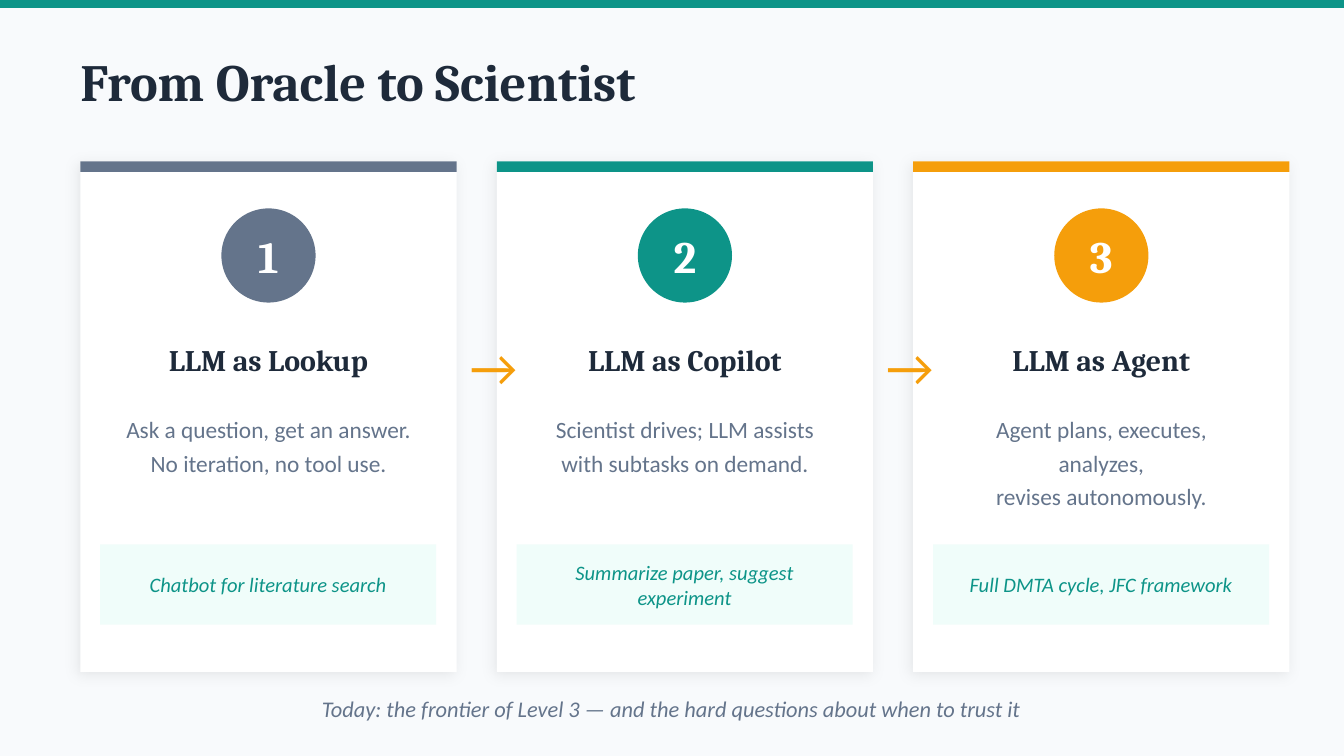
from lxml import etree
from pptx import Presentation
from pptx.dml.color import RGBColor
from pptx.enum import shapes, text
from pptx.oxml import ns
from pptx.util import Cm, Pt

INK, SLATE, TEAL, AMBER = "1E2A3A", "64748B", "0D9488", "F59E0B"
WHITE, MINT, PAPER = "FFFFFF", "F0FDFA", "F8FAFC"
RECTANGLE, OVAL = shapes.MSO_SHAPE.RECTANGLE, shapes.MSO_SHAPE.OVAL

presentation = Presentation()
presentation.slide_width, presentation.slide_height = Cm(25.4), Cm(14.29)
slide = presentation.slides.add_slide(presentation.slide_layouts[5])
slide.background.fill.solid()
slide.background.fill.fore_color.rgb = RGBColor.from_string(PAPER)


def add_block(left, top, width, height, fill=None, kind=RECTANGLE):
    """Add a borderless filled shape, or a text box when there is no fill."""
    box = [Cm(value) for value in (left, top, width, height)]
    if fill is None:
        return slide.shapes.add_textbox(*box)
    shape = slide.shapes.add_shape(kind, *box)
    shape.shadow.inherit = False
    shape.fill.solid()
    shape.fill.fore_color.rgb = RGBColor.from_string(fill)
    shape.line.fill.background()
    return shape


def write(shape, content, size, color, font="Calibri", bold=False, italic=False,
          align=text.PP_ALIGN.CENTER, anchor=text.MSO_ANCHOR.MIDDLE, spacing=None):
    frame = shape.text_frame
    frame.word_wrap = True
    frame.auto_size = text.MSO_AUTO_SIZE.NONE
    frame.vertical_anchor = anchor
    frame.text = content
    for paragraph in frame.paragraphs:
        paragraph.alignment = align
        paragraph.line_spacing = spacing
        paragraph.font.name = font
        paragraph.font.size = Pt(size)
        paragraph.font.bold = bold
        paragraph.font.italic = italic
        paragraph.font.color.rgb = RGBColor.from_string(color)


add_block(0, 0, 25.4, 0.15, TEAL)

title = slide.shapes.title
title.left, title.top, title.width, title.height = Cm(1.52), Cm(0.64), Cm(22.86), Cm(1.78)
frame = title.text_frame
frame.margin_left = frame.margin_right = frame.margin_top = frame.margin_bottom = 0
write(title, "From Oracle to Scientist", 28, INK, font="Cambria", bold=True,
      align=text.PP_ALIGN.LEFT)

levels = [
    (SLATE, "LLM as Lookup",
     "Ask a question, get an answer.\nNo iteration, no tool use.",
     "Chatbot for literature search"),
    (TEAL, "LLM as Copilot",
     "Scientist drives; LLM assists\nwith subtasks on demand.",
     "Summarize paper, suggest experiment"),
    (AMBER, "LLM as Agent",
     "Agent plans, executes, analyzes,\nrevises autonomously.",
     "Full DMTA cycle, JFC framework"),
]
card_left, card_top, card_width, card_step = 1.52, 3.05, 7.11, 7.87

for index, (accent, heading, description, example) in enumerate(levels):
    left = card_left + index * card_step
    center = left + card_width / 2

    card = add_block(left, card_top, card_width, 9.65, WHITE)
    effects = card._element.spPr.find(ns.qn("a:effectLst"))
    shadow = etree.SubElement(effects, ns.qn("a:outerShdw"), blurRad=str(Pt(8)),
                              dist=str(Pt(2)), dir=str(135 * 60000),
                              algn="bl", rotWithShape="0")
    shade = etree.SubElement(shadow, ns.qn("a:srgbClr"), val="000000")
    etree.SubElement(shade, ns.qn("a:alpha"), val="8000")

    add_block(left, card_top, card_width, 0.2, accent)
    badge = add_block(center - 0.89, 3.94, 1.78, 1.78, accent, kind=OVAL)
    write(badge, str(index + 1), 24, WHITE, font="Cambria", bold=True)
    write(add_block(center - 3.05, 6.22, 6.1, 1.14), heading, 16, INK,
          font="Cambria", bold=True)
    write(add_block(center - 3.05, 7.62, 6.1, 2.29), description, 12.5, SLATE,
          anchor=text.MSO_ANCHOR.TOP, spacing=1.2)
    write(add_block(center - 3.18, 10.29, 6.35, 1.52, MINT), example, 11, TEAL,
          italic=True)

for index in range(len(levels) - 1):
    gap_left = card_left + card_width + index * card_step
    write(add_block(gap_left, 6.35, 1.02, 1.14), "→", 28, AMBER)

write(add_block(1.52, 12.95, 22.35, 0.89),
      "Today: the frontier of Level 3 — and the hard questions about when to trust it",
      12, SLATE, italic=True)

presentation.save("out.pptx")
